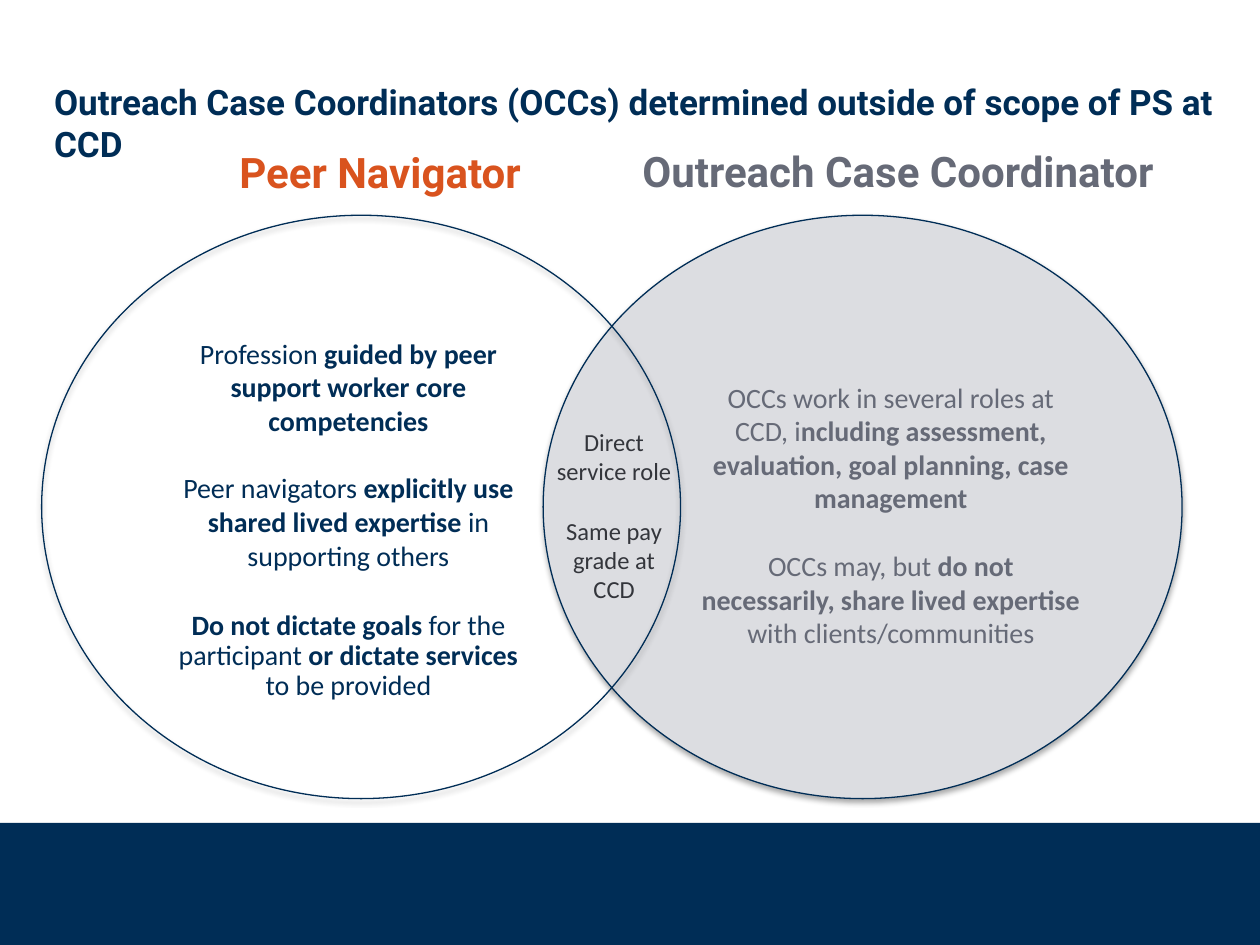
from pptx import Presentation
from pptx.dml.color import RGBColor
from pptx.enum.shapes import MSO_SHAPE
from pptx.enum.text import MSO_ANCHOR, MSO_AUTO_SIZE, PP_ALIGN
from pptx.oxml import parse_xml
from pptx.oxml.ns import nsdecls, qn
from pptx.util import Cm, Pt

RECTANGLE, ELLIPSE = MSO_SHAPE.RECTANGLE, MSO_SHAPE.OVAL
LEFT, CENTER = PP_ALIGN.LEFT, PP_ALIGN.CENTER
TOP, MIDDLE = MSO_ANCHOR.TOP, MSO_ANCHOR.MIDDLE
FIXED, GROW = MSO_AUTO_SIZE.NONE, MSO_AUTO_SIZE.SHAPE_TO_FIT_TEXT

NAVY, ORANGE, GRAY, PALE, DARK = "002D56", "D9531E", "666A77", "DCDDE1", "33353B"


def color(hex_value):
    return RGBColor.from_string(hex_value)


class VennSlide:
    heading_font, body_font = "Roboto", "Calibri"
    title_only = 5

    def __init__(self, presentation):
        self.slide = presentation.slides.add_slide(presentation.slide_layouts[self.title_only])

    def band(self, box, fill):
        band = self.slide.shapes.add_shape(RECTANGLE, *map(Cm, box))
        band.shadow.inherit = False
        band.fill.solid()
        band.fill.fore_color.rgb = color(fill)
        band.line.fill.background()

    def circle(self, box, fill=None):
        circle = self.slide.shapes.add_shape(ELLIPSE, *map(Cm, box))
        circle.shadow.inherit = False
        if fill:
            circle.fill.solid()
            circle.fill.fore_color.rgb = color(fill)
        else:
            circle.fill.background()
        circle.line.color.rgb = color(NAVY)
        circle.line.width = Pt(0.75)
        # Soft shadow straight below the circle
        effects = circle._element.spPr.find(qn("a:effectLst"))
        effects.append(parse_xml(
            f'<a:outerShdw {nsdecls("a")} blurRad="{Pt(3.1)}" dist="{Pt(1.8)}" '
            'dir="5400000" rotWithShape="0"><a:srgbClr val="000000">'
            '<a:alpha val="35000"/></a:srgbClr></a:outerShdw>'))

    def place_title(self, box):
        title = self.slide.shapes.title
        title.left, title.top, title.width, title.height = map(Cm, box)
        return title

    def text_box(self, box):
        return self.slide.shapes.add_textbox(*map(Cm, box))

    def heading(self, shape, text, size, tone, anchor=MIDDLE, fit=FIXED):
        font = {"name": self.heading_font, "size": Pt(size)}
        self.set_text(shape, [([(text, True)], {"alignment": LEFT})], font, tone, anchor, fit)

    def points(self, box, paragraphs, size, tone):
        font = {"name": self.body_font, "size": Pt(size)}
        self.set_text(self.text_box(box), paragraphs, font, tone, TOP, GROW)

    def set_text(self, shape, paragraphs, font, tone, anchor, fit):
        frame = shape.text_frame
        frame.word_wrap, frame.vertical_anchor, frame.auto_size = True, anchor, fit
        for index, (runs, layout) in enumerate(paragraphs):
            paragraph = frame.add_paragraph() if index else frame.paragraphs[0]
            for key, value in ({"alignment": CENTER} | layout).items():
                setattr(paragraph, key, value)
            for text, bold in runs:
                run = paragraph.add_run()
                run.text = text
                for key, value in (font | {"bold": bold}).items():
                    setattr(run.font, key, value)
                run.font.color.rgb = color(tone)


def main():
    presentation = Presentation()
    presentation.slide_width, presentation.slide_height = Cm(25.4), Cm(19.05)
    venn = VennSlide(presentation)

    # Footer band and the two overlapping circles
    venn.band((0, 16.59, 25.4, 2.46), NAVY)
    circle_top, circle_width, circle_height = 4.34, 12.88, 11.76
    for left, fill in ((10.95, PALE), (0.84, None)):
        venn.circle((left, circle_top, circle_width, circle_height), fill)

    # Circle headings
    venn.heading(venn.place_title((4.57, 1.75, 9.22, 3.43)), "Peer Navigator", 24, ORANGE)
    venn.heading(venn.text_box((12.7, 1.73, 12.5, 3.43)), "Outreach Case Coordinator", 24, GRAY)

    # Shared by both roles
    venn.points((10.97, 8.48, 2.82, 3.84), [
        ([("Direct service role", False)], {}),
        ([("Same pay grade at CCD", False)], {"space_before": Pt(17.1)}),
    ], 14, DARK)

    # Peer navigator only
    line_gap = {"space_before": Pt(19.5)}
    venn.points((3.05, 6.65, 7.95, 7.72), [
        ([("Profession ", False),
          ("guided by peer support worker core competencies", True)], {}),
        ([("Peer navigators ", False), ("explicitly use shared lived expertise ", True),
          ("in supporting others", False)], line_gap),
        ([("Do not dictate goals", True), (" for the participant ", False),
          ("or dictate services", True), (" to be provided", False)],
         {"space_before": Pt(22.7), "line_spacing": 0.9}),
    ], 16, NAVY)

    # Outreach case coordinator only
    venn.points((13.87, 7.54, 8.18, 5.74), [
        ([("OCCs work in several roles at CCD, i", False),
          ("ncluding assessment, evaluation, goal planning, case management", True)], {}),
        ([("OCCs may, but ", False), ("do not necessarily, share lived expertise", True),
          (" with clients/communities", False)], line_gap),
    ], 16, GRAY)

    # Statement across the top
    venn.heading(
        venn.text_box((0.84, 1.5, 24.46, 1.12)),
        "Outreach Case Coordinators (OCCs) determined outside of scope of PS at CCD",
        20, NAVY, TOP, GROW)

    presentation.save("out.pptx")


if __name__ == "__main__":
    main()
